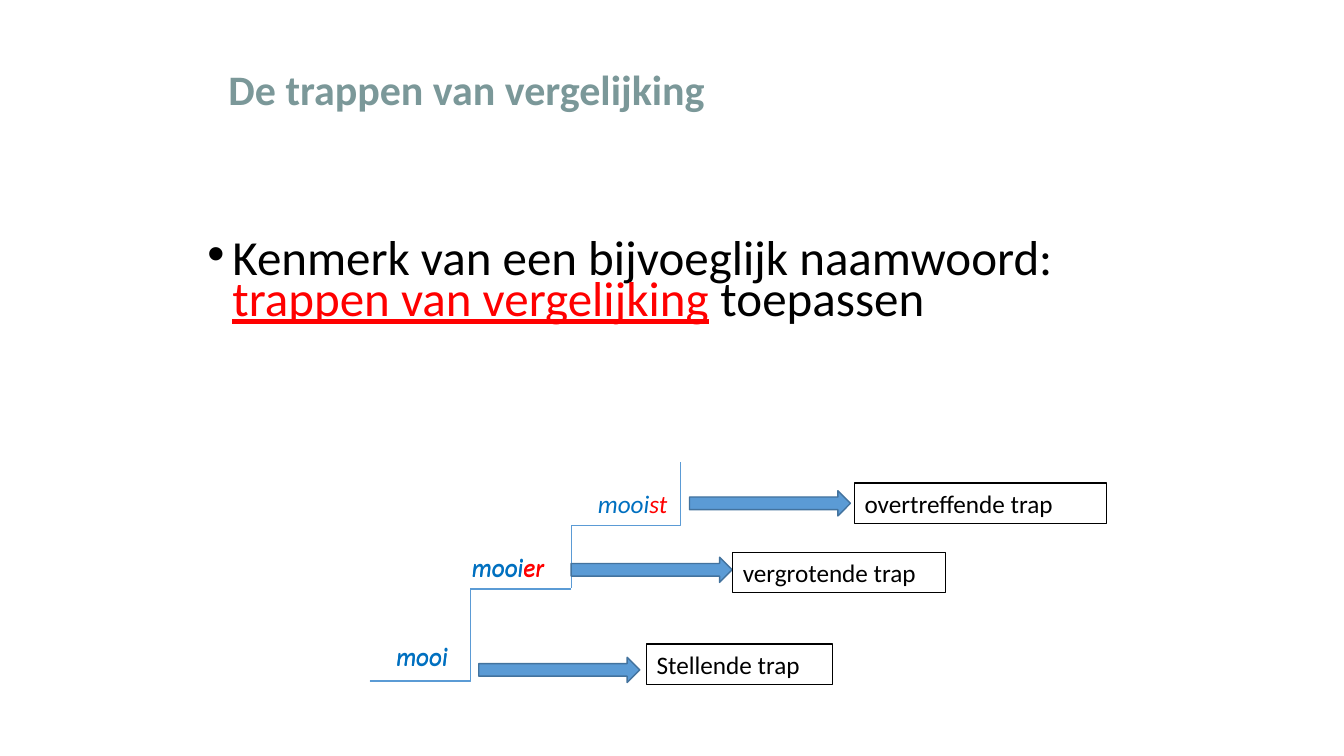
from lxml import etree
from pptx import Presentation
from pptx.dml.color import RGBColor
from pptx.enum import shapes, text
from pptx.oxml import ns
from pptx.util import Pt

SAGE = RGBColor(0x7B, 0x98, 0x99)
BLACK = RGBColor(0, 0, 0)
RED = RGBColor(0xFF, 0, 0)
WORD_BLUE = RGBColor(0x00, 0x70, 0xC0)
STEP_BLUE = RGBColor(0x5B, 0x9B, 0xD5)
ARROW_EDGE = RGBColor(0x43, 0x73, 0x9E)

LABEL_HEIGHT = 29
ARROW_SIZE = (115, 18)

# stem, ending, word box (left, top, width)
WORDS = [
    ("mooi", "", (276, 453.5, 66)),
    ("mooi", "er", (330, 390, 78)),
    ("mooi", "st", (420, 345, 66)),
]
# name, arrow (left, top), label box (left, top, width)
DEGREES = [
    ("Stellende trap", (342, 469.5), (462, 460, 133)),
    ("vergrotende trap", (408, 398), (523.5, 394.5, 152)),
    ("overtreffende trap", (492.5, 350.5), (610.5, 345, 180)),
]


def add_run(paragraph, words, size, color, **formats):
    run = paragraph.add_run()
    run.text = words
    run.font.color.rgb = color
    for name, value in {"name": "Calibri", "size": Pt(size), **formats}.items():
        setattr(run.font, name, value)


def set_frame(frame, **formats):
    for name, value in {"word_wrap": True, **formats}.items():
        setattr(frame, name, value)


def add_title(slide, left, top, width, height):
    title = slide.shapes.title
    box = {"left": left, "top": top, "width": width, "height": height}
    for name, value in box.items():
        setattr(title, name, Pt(value))
    set_frame(title.text_frame, vertical_anchor=text.MSO_ANCHOR.MIDDLE)
    paragraph = title.text_frame.paragraphs[0]
    paragraph.alignment = text.PP_ALIGN.LEFT
    paragraph.line_spacing = 0.9
    add_run(paragraph, "De trappen van vergelijking", 30, SAGE, bold=True)


def add_statement(slide, left, top, width, height):
    box = slide.shapes.add_textbox(Pt(left), Pt(top), Pt(width), Pt(height))
    set_frame(box.text_frame, margin_top=Pt(59))
    paragraph = box.text_frame.paragraphs[0]
    paragraph.line_spacing = 0.7
    properties = paragraph._p.get_or_add_pPr()
    properties.set("marL", str(Pt(18)))
    properties.set("indent", str(Pt(-18)))
    etree.SubElement(properties, ns.qn("a:buFont"), typeface="Arial")
    etree.SubElement(properties, ns.qn("a:buChar"), char="•")
    add_run(paragraph, "Kenmerk van een bijvoeglijk naamwoord: ", 35, BLACK)
    add_run(paragraph, "trappen van vergelijking", 35, RED, underline=True)
    add_run(paragraph, " toepassen", 35, BLACK)


def add_step(slide, begin, end, rotation=0):
    """Draw an elbow line; rotation is in degrees, clockwise."""
    points = [Pt(value) for value in (*begin, *end)]
    step = slide.shapes.add_connector(shapes.MSO_CONNECTOR.ELBOW, *points)
    step.line.color.rgb = STEP_BLUE
    step.line.width = Pt(0.5)
    properties = step._element.spPr
    etree.SubElement(properties, ns.qn("a:effectLst"))
    if rotation:
        properties.find(ns.qn("a:xfrm")).set("rot", str(rotation * 60000))


def add_word(slide, stem, ending, left, top, width):
    box = slide.shapes.add_textbox(Pt(left), Pt(top), Pt(width), Pt(LABEL_HEIGHT))
    set_frame(box.text_frame)
    paragraph = box.text_frame.paragraphs[0]
    add_run(paragraph, stem, 18, WORD_BLUE, italic=True)
    if ending:
        add_run(paragraph, ending, 18, RED, italic=True)


def add_arrow(slide, left, top):
    width, height = ARROW_SIZE
    arrow = slide.shapes.add_shape(
        shapes.MSO_SHAPE.RIGHT_ARROW, Pt(left), Pt(top), Pt(width), Pt(height))
    arrow.shadow.inherit = False
    arrow.fill.solid()
    arrow.fill.fore_color.rgb = STEP_BLUE
    arrow.line.color.rgb = ARROW_EDGE
    arrow.line.width = Pt(1)


def add_label(slide, words, left, top, width):
    label = slide.shapes.add_shape(
        shapes.MSO_SHAPE.RECTANGLE, Pt(left), Pt(top), Pt(width), Pt(LABEL_HEIGHT))
    label.shadow.inherit = False
    label.fill.background()
    label.line.color.rgb = BLACK
    label.line.width = Pt(0.75)
    set_frame(label.text_frame, vertical_anchor=text.MSO_ANCHOR.TOP)
    paragraph = label.text_frame.paragraphs[0]
    paragraph.alignment = text.PP_ALIGN.LEFT
    add_run(paragraph, words, 18, BLACK)


def add_staircase(slide, left, top):
    """Draw the steps, words and degrees; left and top are its upper left corner."""
    def place(x, y, *size):
        return (left + x - 264, top + y - 330, *size)

    add_step(slide, place(492, 414), place(402, 336), rotation=90)
    # The two lower steps are doubled with a slight shift for a heavier look.
    for shift in (0, 1):
        add_step(slide, place(264, 486 + shift), place(408, 420 + shift))
        for stem, ending, (x, y, width) in WORDS[:2]:
            add_word(slide, stem, ending, *place(x, y + shift, width))
    stem, ending, box = WORDS[2]
    add_word(slide, stem, ending, *place(*box))
    for name, arrow, label in DEGREES:
        add_arrow(slide, *place(*arrow))
        add_label(slide, name, *place(*label))


def main():
    presentation = Presentation()
    presentation.slide_width = Pt(960)
    presentation.slide_height = Pt(540)
    slide = presentation.slides.add_slide(presentation.slide_layouts[5])
    add_title(slide, 156, 42, 648, 48)
    add_statement(slide, 141, 114, 678, 414)
    add_staircase(slide, 264, 330)
    presentation.save("out.pptx")


if __name__ == "__main__":
    main()
